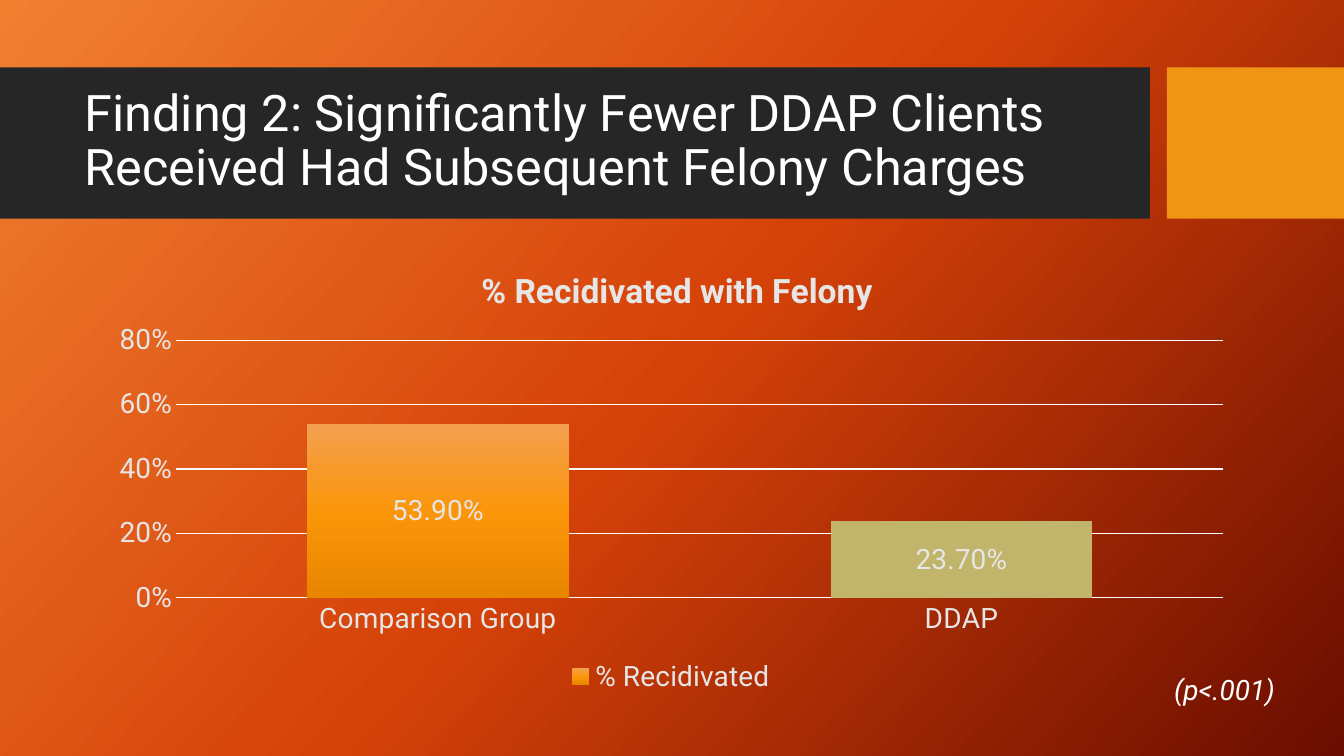
from lxml.etree import SubElement
from pptx import Presentation
from pptx.chart.data import CategoryChartData
from pptx.dml.color import RGBColor as RGB
from pptx.enum.chart import (XL_CHART_TYPE as CHART, XL_LABEL_POSITION as LABEL,
                             XL_LEGEND_POSITION as LEGEND, XL_TICK_MARK as TICK)
from pptx.enum.shapes import MSO_SHAPE as SHAPE
from pptx.enum.text import MSO_ANCHOR as ANCHOR, MSO_AUTO_SIZE as AUTO, PP_ALIGN as ALIGN
from pptx.oxml.ns import qn
from pptx.util import Cm, Pt

FONT = "Roboto"
WHITE = RGB(0xFF, 0xFF, 0xFF)
PALE = RGB(0xE7, 0xE6, 0xE6)
GRID = RGB(0xFB, 0xFB, 0xFB)
CHARCOAL = RGB(0x26, 0x26, 0x26)
AMBER = RGB(0xF0, 0x94, 0x15)
OLIVE = RGB(0xC1, 0xB5, 0x6B)
BACKDROP = RGB(0xF1, 0x80, 0x31), RGB(0xD5, 0x42, 0x09), RGB(0x6A, 0x0D, 0x00)
BAR = RGB(0xF4, 0xA0, 0x50), RGB(0xFB, 0x96, 0x0A), RGB(0xE8, 0x86, 0x00)


def style_font(font, size, color, bold=False, italic=False):
    font.name, font.size = FONT, Pt(size)
    font.color.rgb = color
    font.bold, font.italic = bold, italic


def set_gradient(fill, owner, colors, angle):
    """Spread the colours evenly, at a clockwise angle in degrees."""
    fill.gradient()
    grad = owner.find(".//" + qn("a:gradFill"))
    stops = grad.find(qn("a:gsLst"))
    for stop in list(stops):
        stops.remove(stop)
    for i, color in enumerate(colors):
        stop = SubElement(stops, qn("a:gs"), pos=str(100000 * i // (len(colors) - 1)))
        SubElement(stop, qn("a:srgbClr"), val=str(color))
    grad.find(qn("a:lin")).set("ang", str(angle * 60000))


def set_layout(parent, inner=False, **fractions):
    """Place a chart part by fractions of the chart's size."""
    layout = parent.get_or_add_layout() if hasattr(parent, "get_or_add_layout") else parent.find(qn("c:layout"))
    if layout is None:
        layout = SubElement(parent, qn("c:layout"))
        parent.insert(0, layout)
    manual = SubElement(layout, qn("c:manualLayout"))
    if inner:
        SubElement(manual, qn("c:layoutTarget"), val="inner")
    for key in ("x", "y"):
        SubElement(manual, qn(f"c:{key}Mode"), val="edge")
    for key, value in fractions.items():
        SubElement(manual, qn(f"c:{key}"), val=str(value))


def add_header(s, top, height, slide_width):
    band, gap = Cm(28.98), Cm(0.43)
    block = band + gap
    for left, width, color in ((0, band, CHARCOAL), (block, slide_width - block, AMBER)):
        sp = s.shapes.add_shape(SHAPE.RECTANGLE, left, top, width, height)
        sp.shadow.inherit = False
        sp.fill.solid()
        sp.fill.fore_color.rgb = color
        sp.line.fill.background()

    title = s.shapes.title
    title.element.getparent().append(title.element)
    title.left, title.top = Cm(1.88), top + Cm(0.38)
    title.width, title.height = Cm(26.7), Cm(3)
    tf = title.text_frame
    tf.text = "Finding 2: Significantly Fewer DDAP Clients Received Had Subsequent Felony Charges"
    tf.word_wrap, tf.auto_size = True, AUTO.NONE
    tf.vertical_anchor = ANCHOR.MIDDLE
    p = tf.paragraphs[0]
    p.alignment, p.line_spacing = ALIGN.LEFT, 0.9
    style_font(p.runs[0].font, 36, WHITE)


def add_felony_chart(s, left, top, width, height):
    data = CategoryChartData(number_format="0.00%")
    data.categories = ["Comparison Group", "DDAP"]
    data.add_series("% Recidivated", (0.539, 0.237))
    chart = s.shapes.add_chart(CHART.COLUMN_CLUSTERED, left, top, width, height, data).chart
    style_font(chart.font, 20, WHITE)

    tf = chart.chart_title.text_frame
    tf.text = "% Recidivated with Felony"
    style_font(tf.paragraphs[0].runs[0].font, 24, PALE, bold=True)
    chart.chart_title.include_in_layout = False
    set_layout(chart.chart_title.element if hasattr(chart.chart_title, "element")
               else tf._txBody.getparent().getparent(), x=0.33, y=0.05)
    set_layout(chart.element.find(".//" + qn("c:plotArea")) if hasattr(chart, "element")
               else chart.plots[0]._element.getparent(),
               inner=True, x=0.07, y=0.22, w=0.91, h=0.56)

    chart.has_legend = True
    chart.legend.position = LEGEND.BOTTOM
    chart.legend.include_in_layout = False
    style_font(chart.legend.font, 20, PALE)

    for axis in (chart.category_axis, chart.value_axis):
        axis.major_tick_mark = axis.minor_tick_mark = TICK.NONE
        style_font(axis.tick_labels.font, 20, PALE)
    value_axis = chart.value_axis
    value_axis.minimum_scale, value_axis.maximum_scale, value_axis.major_unit = 0, 0.8, 0.2
    value_axis.tick_labels.number_format = "0%"
    value_axis.tick_labels.number_format_is_linked = False
    value_axis.format.line.fill.background()
    for line in (chart.category_axis.format.line, value_axis.major_gridlines.format.line):
        line.color.rgb, line.width = GRID, Pt(0.75)

    plot = chart.plots[0]
    plot.gap_width, plot.overlap, plot.vary_by_categories = 100, -24, False
    series = plot.series[0]
    set_gradient(series.format.fill, series._element, BAR, 90)
    ddap = series.points[1].format.fill
    ddap.solid()
    ddap.fore_color.rgb = OLIVE
    labels = series.data_labels
    labels.show_value, labels.position = True, LABEL.CENTER
    labels.number_format, labels.number_format_is_linked = "0.00%", False
    style_font(labels.font, 20, PALE)


def add_significance(s, left, top, width, height):
    tf = s.shapes.add_textbox(left, top, width, height).text_frame
    tf.text = "(p<.001)"
    tf.word_wrap, tf.auto_size = True, AUTO.SHAPE_TO_FIT_TEXT
    p = tf.paragraphs[0]
    p.alignment = ALIGN.RIGHT
    style_font(p.runs[0].font, 20, WHITE, italic=True)


def main():
    prs = Presentation()
    prs.slide_width, prs.slide_height = Cm(33.87), Cm(19.05)
    s = prs.slides.add_slide(prs.slide_layouts[5])
    set_gradient(s.background.fill, s.element, BACKDROP, 42)
    add_header(s, Cm(1.7), Cm(3.81), prs.slide_width)
    add_felony_chart(s, Cm(2.41), Cm(6.02), Cm(29), Cm(11.6))
    add_significance(s, Cm(26.06), Cm(16.81), Cm(6.32), Cm(1.12))
    prs.save("out.pptx")


if __name__ == "__main__":
    main()
